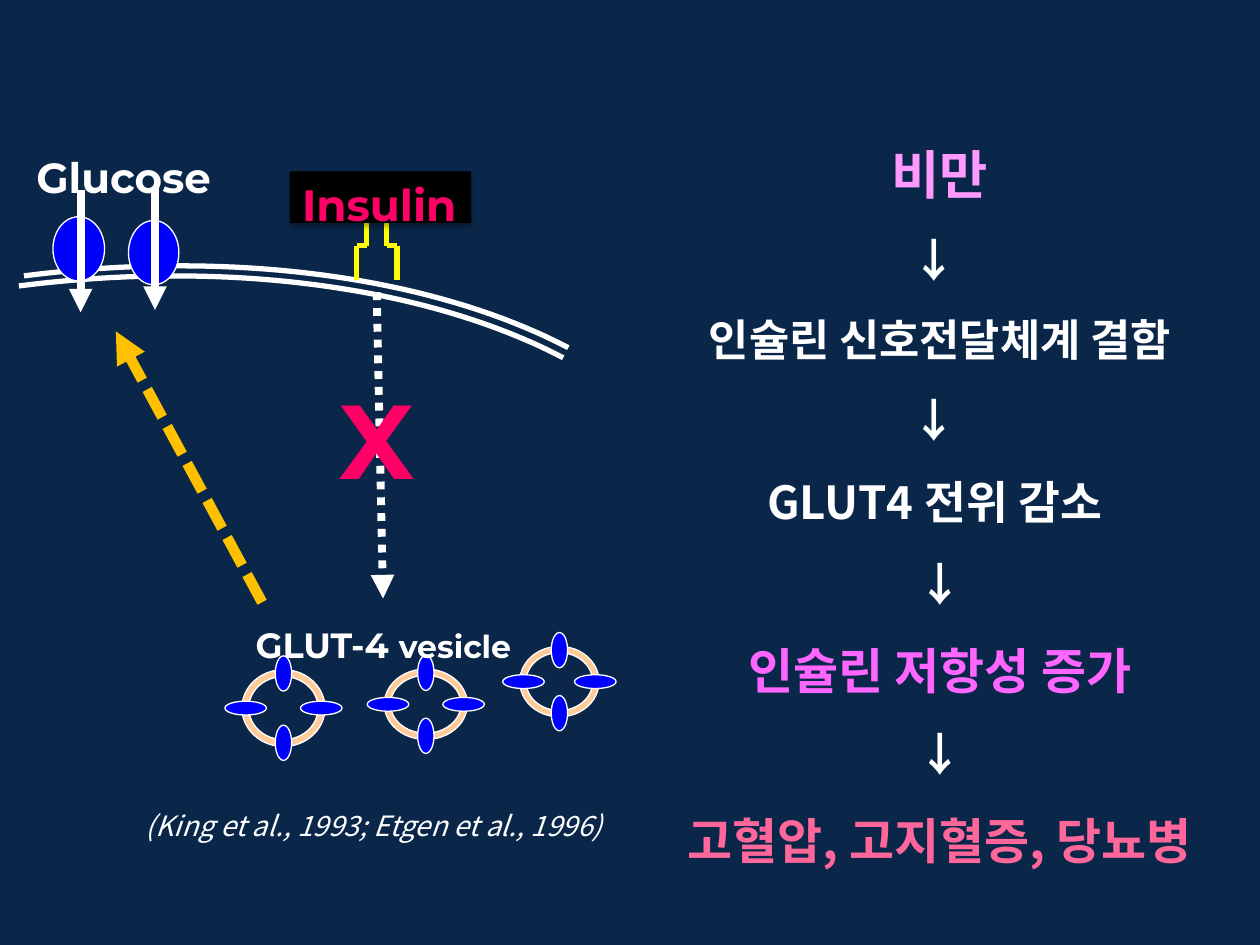
from dataclasses import dataclass
from typing import Optional

from lxml import etree
from pptx import Presentation
from pptx import util as u
from pptx.dml.color import RGBColor
from pptx.enum import dml, shapes, text
from pptx.oxml import ns

PX = 9144  # one px is a hundredth of an inch
COLORS = {
    "navy": "0A274A", "white": "FFFFFF", "black": "000000", "yellow": "FFFF00",
    "amber": "FFC000", "blue": "0000FF", "peach": "FFCC99", "red": "FF0066",
    "lilac": "FF99FF", "magenta": "FF66FF", "rose": "FF6699",
}
MONTSERRAT, KOREAN, CHINESE = "Montserrat", "Noto Sans CJK KR", "Noto Sans CJK SC"


@dataclass
class Span:
    words: str
    size: int
    color: str = "white"
    font: str = MONTSERRAT
    bold: bool = True
    italic: bool = False


@dataclass
class Line:
    start: tuple[int, int]
    end: tuple[int, int]
    color: str
    width: float
    arrow: bool = False
    dash: Optional[dml.MSO_LINE] = None


@dataclass
class Vesicle:
    center: tuple[int, int]
    size: tuple[int, int]


FLOW = [
    Span("비만", 30, "lilac", KOREAN),
    Span("↓ ", 26, font=KOREAN),
    Span("인슐린 신호전달체계 결함", 25, font=KOREAN),
    Span("↓ ", 26, font=KOREAN),
    Span("GLUT4 전위 감소 ", 26, font=KOREAN),
    Span("↓", 26, font=KOREAN),
    Span("인슐린 저항성 증가", 28, "magenta", KOREAN),
    Span("↓", 26, font=KOREAN),
    Span("고혈압, 고지혈증, 당뇨병", 28, "rose", KOREAN),
]
MEMBRANE = [(15, 227), (179, 206), (338, 227), (447, 284)]
MEMBRANE_SHIFTS = [(0, 0), (4, -8)]
RECEPTOR_CENTER = 299
SIGNAL = Line((299, 232), (304, 475), "white", 4.5, True, dml.MSO_LINE.ROUND_DOT)
TRANSLOCATION = Line((208, 478), (92, 263), "amber", 6, True, dml.MSO_LINE.SQUARE_DOT)
TRANSPORTERS = [(102, 175, 40, 51), (42, 172, 41, 51)]
GLUCOSE_ARROWS = [
    Line((64, 151), (64, 248), "white", 4.5, True),
    Line((123, 149), (123, 246), "white", 4.5, True),
]
VESICLES = [
    Vesicle((338, 559), (66, 56)),
    Vesicle((444, 541), (63, 56)),
    Vesicle((225, 562), (66, 61)),
]


def emu(*lengths: float) -> list[int]:
    return [round(length * PX) for length in lengths]


def rgb(name: str) -> RGBColor:
    return RGBColor.from_string(COLORS[name])


def add_child(parent, tag: str, **attributes: str):
    return etree.SubElement(parent, ns.qn(tag), attributes)


def add_span(para, span: Span) -> None:
    run = para.add_run()
    run.text = span.words
    font = run.font
    font.size, font.name = u.Pt(span.size), span.font
    font.bold, font.italic = span.bold, span.italic
    font.color.rgb = rgb(span.color)
    add_child(font._element, "a:ea", typeface=span.font)


def add_label(page, area: tuple[int, int, int, int], *spans: Span):
    box = page.shapes.add_textbox(*emu(*area))
    box.text_frame.word_wrap = False
    for span in spans:
        add_span(box.text_frame.paragraphs[0], span)
    return box


def add_line(page, line: Line) -> None:
    connector = page.shapes.add_connector(
        shapes.MSO_CONNECTOR.STRAIGHT, *emu(*line.start, *line.end))
    connector.line.color.rgb = rgb(line.color)
    connector.line.width = u.Pt(line.width)
    if line.dash is not None:
        connector.line.dash_style = line.dash
    if line.arrow:
        add_child(connector.line._get_or_add_ln(), "a:tailEnd", type="triangle")
    add_child(connector._element.spPr, "a:effectLst")


def add_outlined(page, kind: shapes.MSO_SHAPE, area: tuple, fill: str):
    """Draw a filled preset shape with a thin white outline."""
    shape = page.shapes.add_shape(kind, *emu(*area))
    shape.shadow.inherit = False
    shape.fill.solid()
    shape.fill.fore_color.rgb = rgb(fill)
    shape.line.color.rgb = rgb("white")
    shape.line.width = u.Pt(0.75)
    return shape


def add_vesicle(page, vesicle: Vesicle) -> None:
    """Draw a ring with a transporter on each of its four sides."""
    (x, y), (width, height) = vesicle.center, vesicle.size
    ring = add_outlined(page, shapes.MSO_SHAPE.DONUT,
                        (x - width / 2, y - height / 2, width, height), "peach")
    ring.adjustments[0] = 0.09
    reach_x, reach_y = width / 2 - 3, height / 2 - 3
    for side in (-1, 1):
        for dx, dy, w, h in ((0, side * reach_y, 13, 28), (side * reach_x, 0, 33, 11)):
            add_outlined(page, shapes.MSO_SHAPE.OVAL,
                         (x + dx - w / 2, y + dy - h / 2, w, h), "blue")


def add_membrane(page, shift: tuple[int, int], steps: int = 40) -> None:
    """Draw the membrane's cubic curve as an open outline."""
    points = []
    for step in range(steps + 1):
        t = step / steps
        weights = ((1 - t) ** 3, 3 * t * (1 - t) ** 2, 3 * t * t * (1 - t), t ** 3)
        points.append(tuple(
            (sum(w * point[axis] for w, point in zip(weights, MEMBRANE)) + shift[axis]) * PX
            for axis in (0, 1)))
    builder = page.shapes.build_freeform(*points[0])
    builder.add_line_segments(points[1:], close=False)
    curve = builder.convert_to_shape()
    curve.shadow.inherit = False
    curve.fill.background()
    curve.line.color.rgb = rgb("white")
    curve.line.width = u.Pt(3)


def add_receptor(page) -> None:
    for side in (-1, 1):
        inner, outer = RECEPTOR_CENTER + side * 8, RECEPTOR_CENTER + side * 16
        corners = [(inner, 174), (inner, 195), (outer, 195), (outer, 222)]
        for start, end in zip(corners, corners[1:]):
            add_line(page, Line(start, end, "yellow", 3))


def add_insulin(page) -> None:
    box = add_label(page, (230, 136, 144, 41), Span("Insulin", 25, "red"))
    box.fill.solid()
    box.fill.fore_color.rgb = rgb("black")
    effects = add_child(box._element.spPr, "a:effectLst")
    shadow = add_child(effects, "a:outerShdw", blurRad=str(u.Pt(3.1)),
                       dist=str(u.Pt(1.8)), dir="5400000", rotWithShape="0")
    color = add_child(shadow, "a:srgbClr", val=COLORS["black"])
    add_child(color, "a:alpha", val="35000")


def add_flow(page) -> None:
    frame = page.shapes.add_textbox(*emu(496, 101, 500, 575)).text_frame
    frame.word_wrap = True
    frame.vertical_anchor = text.MSO_ANCHOR.MIDDLE
    for index, span in enumerate(FLOW):
        para = frame.add_paragraph() if index else frame.paragraphs[0]
        para.alignment = text.PP_ALIGN.CENTER
        para.line_spacing = 1.5
        add_span(para, span)


def main() -> None:
    deck = Presentation()
    deck.slide_width, deck.slide_height = emu(1000, 750)
    page = deck.slides.add_slide(deck.slide_layouts[6])
    page.background.fill.solid()
    page.background.fill.fore_color.rgb = rgb("navy")

    add_flow(page)
    for shift in MEMBRANE_SHIFTS:
        add_membrane(page, shift)
    add_receptor(page)
    add_line(page, SIGNAL)
    add_insulin(page)
    add_line(page, TRANSLOCATION)
    for area in TRANSPORTERS:
        add_outlined(page, shapes.MSO_SHAPE.OVAL, area, "blue")
    for arrow in GLUCOSE_ARROWS:
        add_line(page, arrow)
    add_label(page, (19, 115, 164, 39), Span("Glucose", 24))
    add_vesicle(page, VESICLES[0])
    add_label(page, (193, 490, 230, 34), Span("GLUT-4 ", 20), Span("vesicle", 18))
    for vesicle in VESICLES[1:]:
        add_vesicle(page, vesicle)
    add_label(page, (260, 292, 83, 87), Span("X", 60, "red"))
    add_label(page, (106, 637, 386, 37), Span(
        "(King et al., 1993; Etgen et al., 1996)", 16,
        font=CHINESE, bold=False, italic=True))
    deck.save("out.pptx")


if __name__ == "__main__":
    main()
